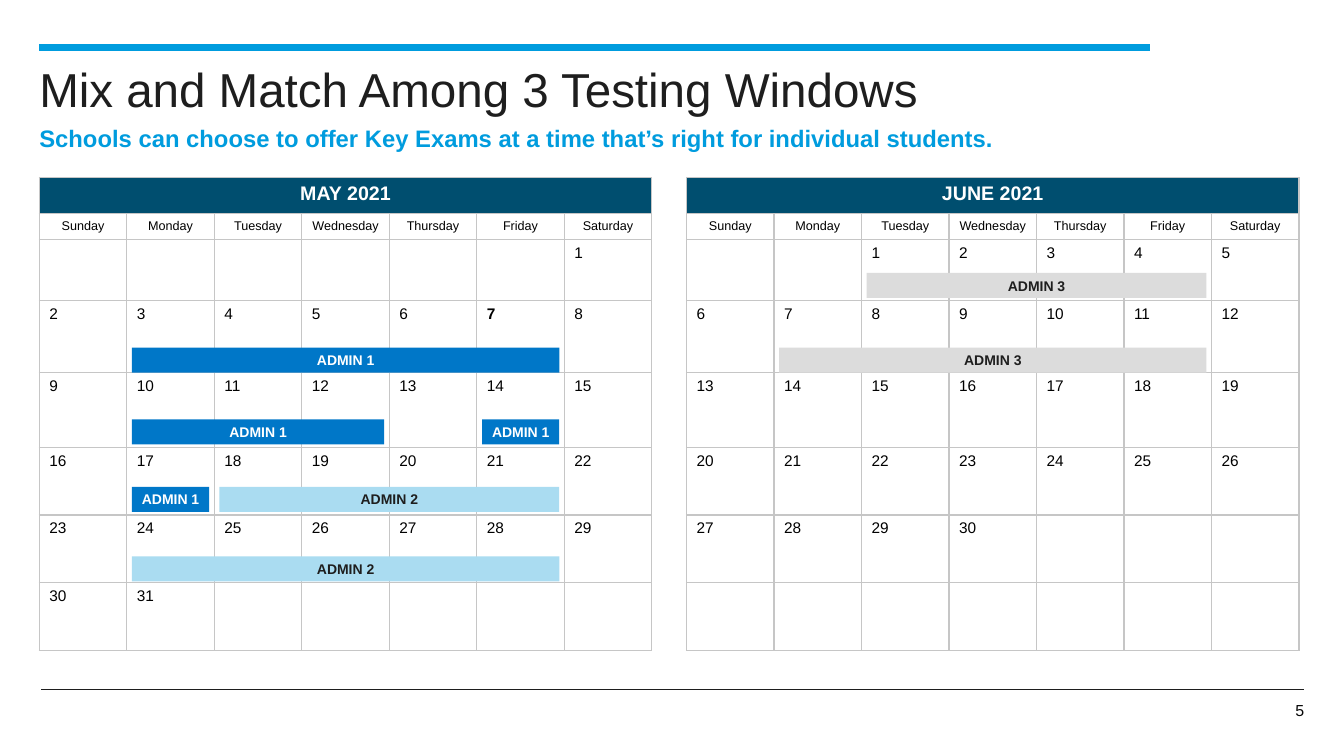
from lxml.etree import SubElement
from pptx import Presentation
from pptx.dml.color import RGBColor
from pptx.enum.shapes import MSO_CONNECTOR, MSO_SHAPE
from pptx.enum.text import MSO_ANCHOR, MSO_AUTO_SIZE, PP_ALIGN
from pptx.oxml.ns import qn
from pptx.util import Cm, Pt

COLORS = {
    "ink": "1E1E1E", "black": "000000", "number": "080808", "white": "FFFFFF",
    "accent": "009CDE", "header": "004E6F", "grid": "C6C6C6",
    "ADMIN 1": "0077C8", "ADMIN 2": "AADCF1", "ADMIN 3": "DCDCDC",
}
WEEKDAYS = ["Sunday", "Monday", "Tuesday", "Wednesday", "Thursday", "Friday", "Saturday"]
COLUMN_WIDTH = 15.44 / len(WEEKDAYS)
ROW_HEIGHTS = [0.92, 0.61, 1.55, 1.8, 1.89, 1.71, 1.71, 1.71]
CALENDAR_TOP = 4.47
BAR_INSET = 0.13
BAR_TOPS = {2: 6.88, 3: 8.76, 4: 10.57, 5: 12.27, 6: 14.02}  # by table row

# title, left edge, column of day 1, days, bold days, bars (label, row, first and last column)
CALENDARS = [
    ("MAY 2021", 0.99, 6, 31, [7], [
        ("ADMIN 1", 3, 1, 5), ("ADMIN 1", 4, 1, 3), ("ADMIN 1", 5, 1, 1),
        ("ADMIN 1", 4, 5, 5), ("ADMIN 2", 5, 2, 5), ("ADMIN 2", 6, 1, 5)]),
    ("JUNE 2021", 17.3, 2, 30, [], [("ADMIN 3", 2, 2, 5), ("ADMIN 3", 3, 1, 5)]),
]


def write(frame, text, size, color, bold=False, align=PP_ALIGN.LEFT):
    """Fill a text frame with one paragraph in a single style."""
    para = frame.paragraphs[0]
    para.text = text
    para.alignment = align
    para.font.name = "Arial"
    para.font.size = Pt(size)
    para.font.bold = bold
    para.font.color.rgb = RGBColor.from_string(COLORS[color])


def add_borders(cell):
    properties = cell._tc.get_or_add_tcPr()
    for side in ("a:lnL", "a:lnR", "a:lnT", "a:lnB"):
        line = SubElement(properties, qn(side), w=str(Pt(1)))
        fill = SubElement(line, qn("a:solidFill"))
        SubElement(fill, qn("a:srgbClr"), val=COLORS["grid"])


deck = Presentation()
deck.slide_width, deck.slide_height = Cm(33.87), Cm(19.05)
page = deck.slides.add_slide(deck.slide_layouts[0])

# Rules above the title and above the page number
for left, right, top, color, weight in [(0.99, 28.98, 1.19, "accent", 5.25),
                                        (1.04, 32.87, 17.37, "ink", 0.25)]:
    rule = page.shapes.add_connector(MSO_CONNECTOR.STRAIGHT, Cm(left), Cm(top), Cm(right), Cm(top))
    rule.line.color.rgb = RGBColor.from_string(COLORS[color])
    rule.line.width = Pt(weight)
    SubElement(rule._element.spPr, qn("a:effectLst"))

# Title and subtitle
headings = [
    (page.shapes.title, 1.5, 27.97, 1.14, 0,
     "Mix and Match Among 3 Testing Windows", 34, "ink", False),
    (page.placeholders[1], 3, 24.26, 1.47, 0.11,
     "Schools can choose to offer Key Exams at a time that’s right for individual students.",
     17, "accent", True),
]
for box, top, width, height, margin_top, text, size, color, bold in headings:
    box.left, box.top, box.width, box.height = Cm(0.99), Cm(top), Cm(width), Cm(height)
    frame = box.text_frame
    frame.auto_size = MSO_AUTO_SIZE.NONE
    frame.vertical_anchor = MSO_ANCHOR.TOP
    frame.margin_left = frame.margin_right = frame.margin_bottom = 0
    frame.margin_top = Cm(margin_top)
    write(frame, text, size, color, bold)
    frame.paragraphs[0].space_before = Pt(0)

# Page number
box = page.shapes.add_textbox(Cm(31.57), Cm(17.68), Cm(1.3), Cm(0.41))
frame = box.text_frame
frame.word_wrap = True
frame.vertical_anchor = MSO_ANCHOR.MIDDLE
frame.margin_left = frame.margin_right = frame.margin_top = frame.margin_bottom = 0
write(frame, "5", 11.4, "number", align=PP_ALIGN.RIGHT)

# Calendars with their testing windows
for month, calendar_left, first_column, day_count, bold_days, bars in CALENDARS:
    table = page.shapes.add_table(
        len(ROW_HEIGHTS), len(WEEKDAYS), Cm(calendar_left), Cm(CALENDAR_TOP),
        Cm(COLUMN_WIDTH * len(WEEKDAYS)), Cm(sum(ROW_HEIGHTS))).table
    table.first_row = table.horz_banding = False
    for column in table.columns:
        column.width = Cm(COLUMN_WIDTH)
    for row, height in zip(table.rows, ROW_HEIGHTS):
        row.height = Cm(height)
    table.cell(0, 0).merge(table.cell(0, len(WEEKDAYS) - 1))

    for row_index in range(len(ROW_HEIGHTS)):
        for column_index, weekday in enumerate(WEEKDAYS):
            cell = table.cell(row_index, column_index)
            add_borders(cell)
            if row_index == 0:
                cell.fill.solid()
                cell.fill.fore_color.rgb = RGBColor.from_string(COLORS["header"])
                text = "" if cell.is_spanned else month
                write(cell.text_frame, text, 14, "white", True, PP_ALIGN.CENTER)
                continue
            cell.fill.background()
            if row_index == 1:
                cell.vertical_anchor = MSO_ANCHOR.MIDDLE
                cell.margin_left = cell.margin_right = Cm(0.1)
                write(cell.text_frame, weekday, 9, "black", align=PP_ALIGN.CENTER)
                continue
            day = (row_index - 2) * len(WEEKDAYS) + column_index - first_column + 1
            text = str(day) if 1 <= day <= day_count else ""
            write(cell.text_frame, text, 11, "black", day in bold_days)

    for label, row_index, first, last in bars:
        bar = page.shapes.add_shape(
            MSO_SHAPE.RECTANGLE, Cm(calendar_left + first * COLUMN_WIDTH + BAR_INSET),
            Cm(BAR_TOPS[row_index]),
            Cm((last - first + 1) * COLUMN_WIDTH - 2 * BAR_INSET), Cm(0.63))
        bar.shadow.inherit = False
        bar.fill.solid()
        bar.fill.fore_color.rgb = RGBColor.from_string(COLORS[label])
        bar.line.fill.background()
        frame = bar.text_frame
        frame.word_wrap = True
        frame.vertical_anchor = MSO_ANCHOR.MIDDLE
        frame.margin_left = frame.margin_right = frame.margin_top = frame.margin_bottom = Cm(0.1)
        write(frame, label, 10, "white" if label == "ADMIN 1" else "ink", True, PP_ALIGN.CENTER)

deck.save("out.pptx")
